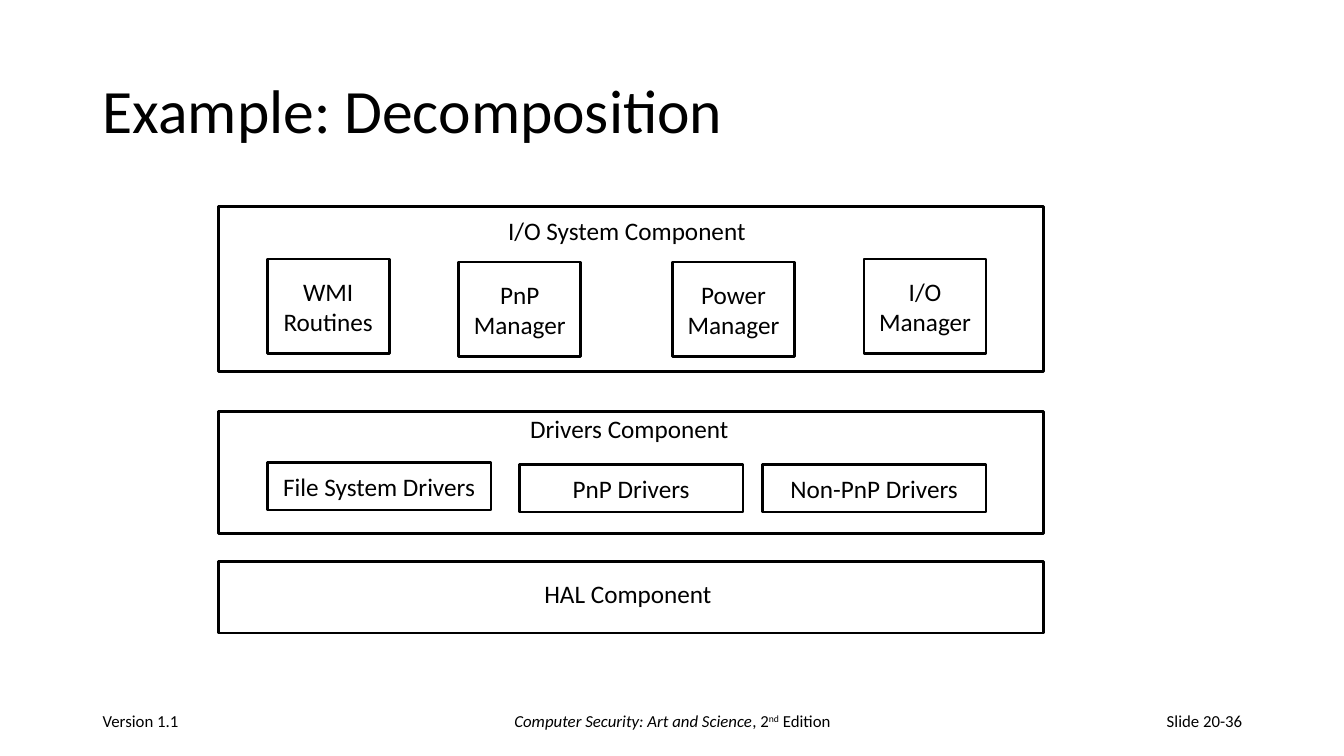
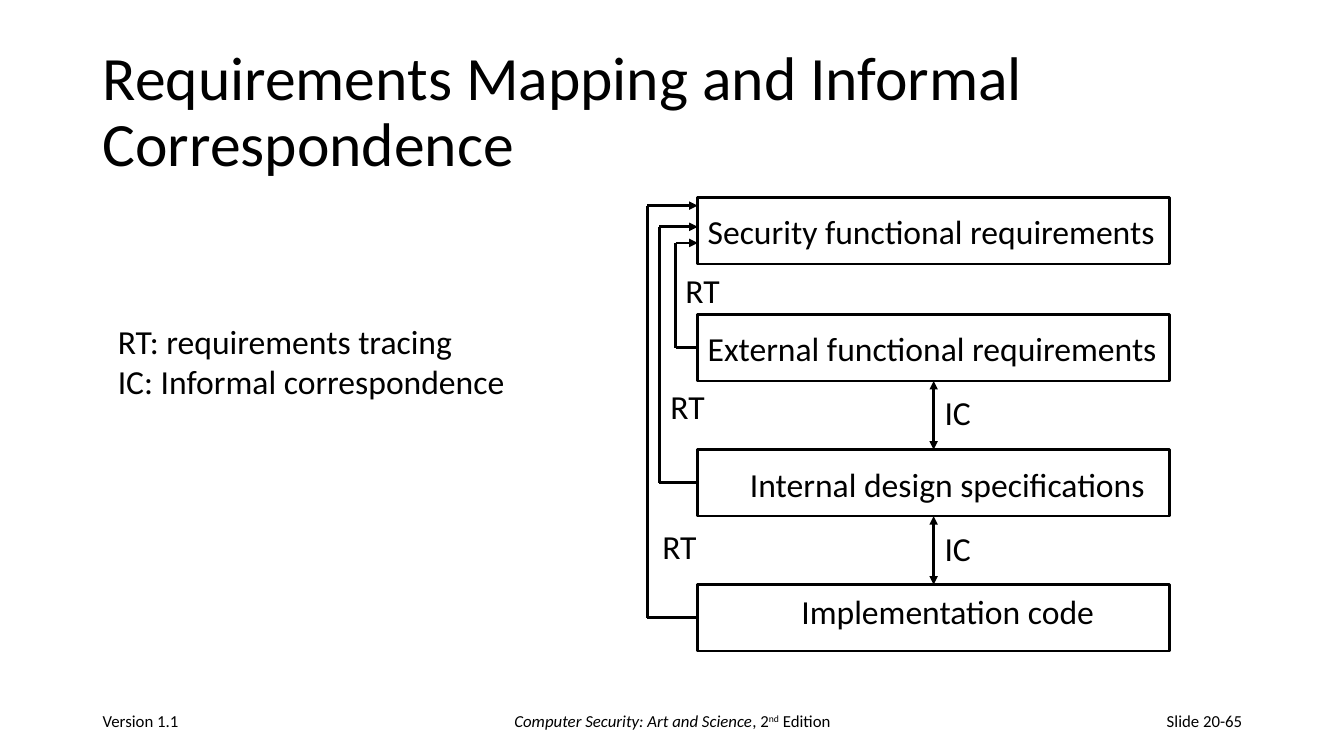
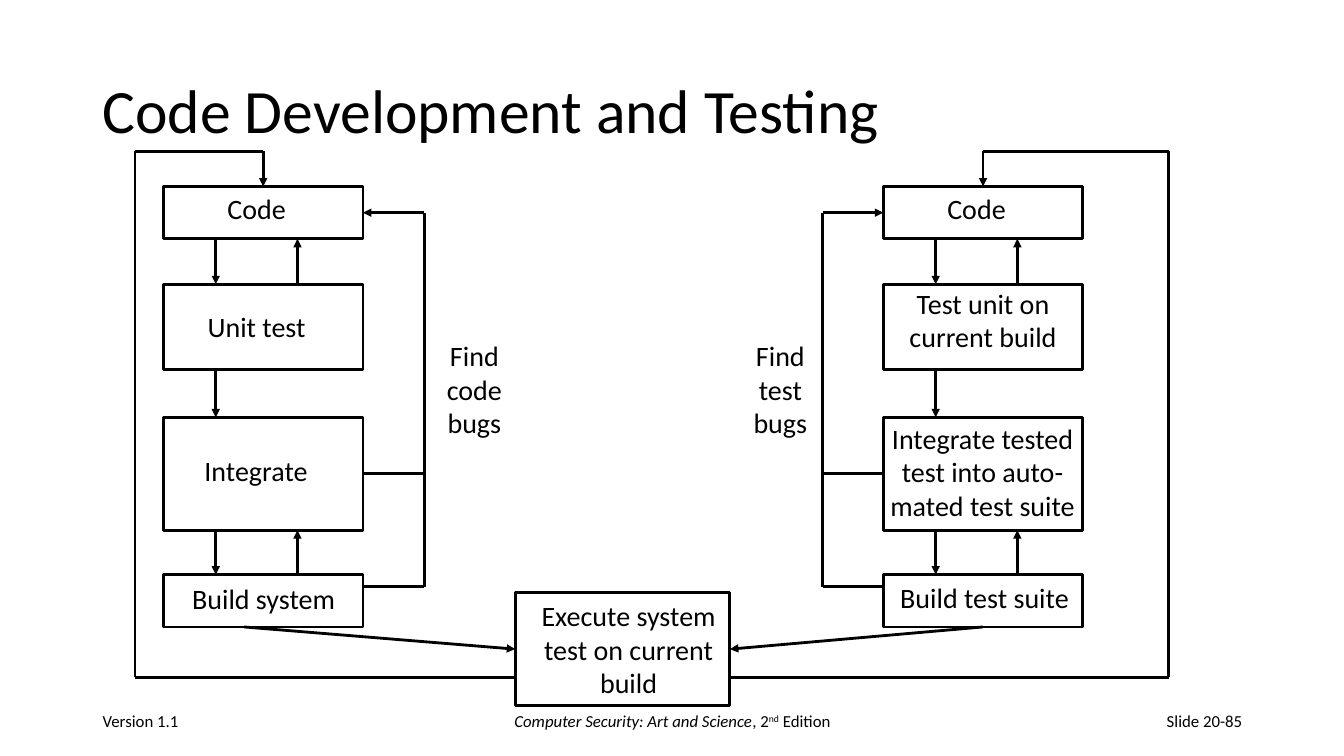
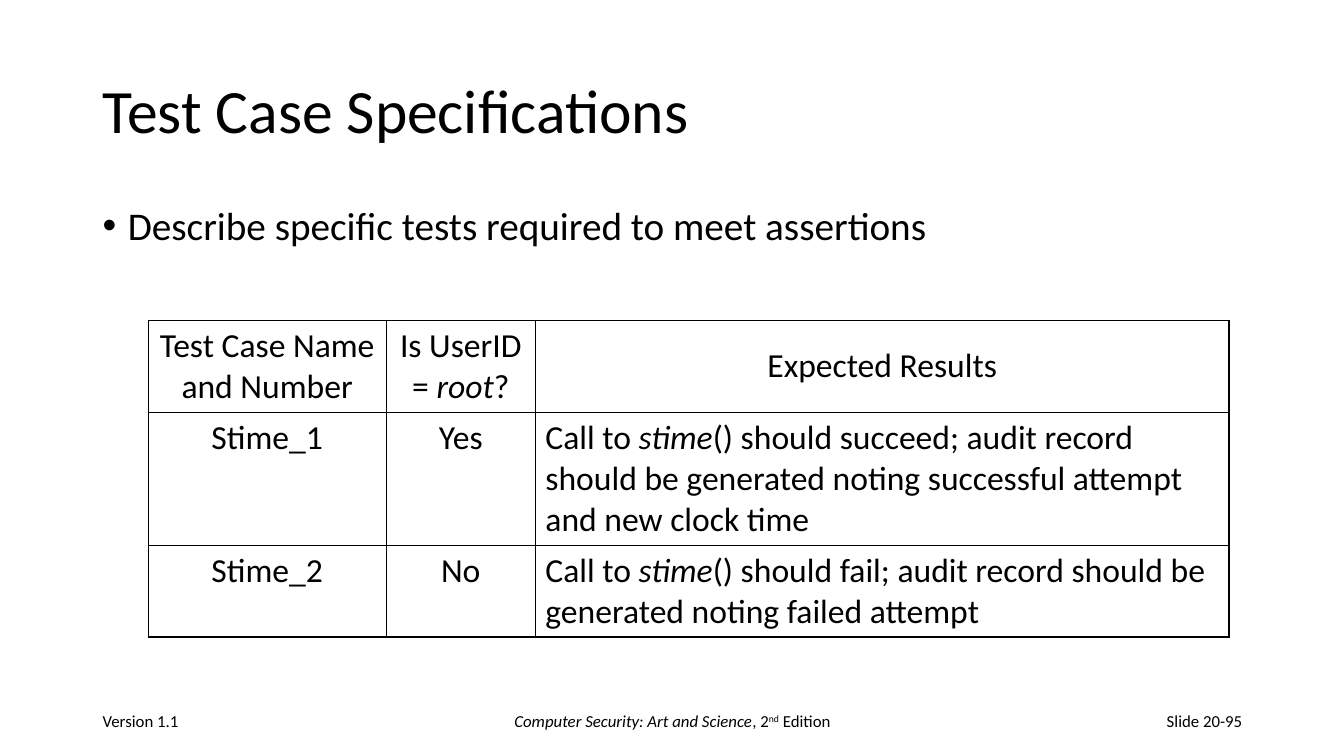
import lxml.etree
import pptx
import pptx.dml.color
import pptx.enum.shapes
import pptx.enum.text
import pptx.oxml
import pptx.oxml.ns
import pptx.util

# ---- Shared style: 100 px to the inch ----
PX = 9144
SLIDE_W, SLIDE_H = 1333, 750
INK = "000000"
FONT = "Calibri"
LINE_PT = 2
LEFT = pptx.enum.text.PP_ALIGN.LEFT
CENTER = pptx.enum.text.PP_ALIGN.CENTER
RIGHT = pptx.enum.text.PP_ALIGN.RIGHT
TOP = pptx.enum.text.MSO_ANCHOR.TOP
MIDDLE = pptx.enum.text.MSO_ANCHOR.MIDDLE

TITLE_AREA = (92, 40, 1150, 145)
FOOTERS = [  # text, left, width, alignment
    ("Version 1.1", 92, 300, LEFT),
    ("*Computer Security: Art and Science*, 2^nd^ Edition", 442, 450, CENTER),
    ("Slide 20-{number}", 942, 300, RIGHT),
]
FOOTER_TOP, FOOTER_H = 695, 40

# ---- Content: *...* is italic, ^...^ is superscript ----
# Slide 1: left, width of the frames; then top, height, label, label left, top, width
FRAME_X, FRAME_W = 217, 818
FRAMES = [
    (205, 164, "I/O System Component", 494, 209, 259),
    (408, 121, "Drivers Component", 516, 405, 219),
    (557, 71, "HAL Component", 530, 569, 188),
]
MANAGER_SIZE, DRIVER_SIZE = (121, 94), (222, 47)
PARTS = [  # text, left, top, size
    ("WMI\nRoutines", 265, 257, MANAGER_SIZE),
    ("PnP\nManager", 455, 260, MANAGER_SIZE),
    ("Power\nManager", 667, 260, MANAGER_SIZE),
    ("I/O\nManager", 857, 257, MANAGER_SIZE),
    ("File System Drivers", 265, 459, DRIVER_SIZE),
    ("PnP Drivers", 515, 461, DRIVER_SIZE),
    ("Non-PnP Drivers", 756, 461, DRIVER_SIZE),
]

# Slide 2: levels of the specification
LEVEL_X, LEVEL_W, LEVEL_H = 692, 468, 66
LEVELS = [  # top, label, label left, top, width
    (196, "Security functional requirements", 692, 204, 468),
    (312, "External functional requirements", 692, 320, 470),
    (446, "Internal design specifications", 734, 455, 416),
    (580, "Implementation code", 785, 581, 313),
]
TRACES = [(1, 670, 241), (2, 654, 225), (3, 642, 204)]  # level, turn x, target y
CORRESPONDENCES = [(1, 2), (2, 3)]  # upper and lower level
MAPPING_LABELS = [  # text, left, top, width
    ("RT", 670, 263, 55), ("RT", 655, 378, 55), ("RT", 647, 517, 55),
    ("IC", 927, 384, 46), ("IC", 927, 519, 46),
    ("RT: requirements tracing\nIC: Informal correspondence", 107, 313, 413),
]

# Slide 3: two mirrored columns of steps
STEP_W = 198
STEPS = [(185, 52), (282, 85), (414, 112), (570, 52)]  # top, height
DOWN_X, UP_X = 52, 133  # arrow offsets from the left of a step
UP_AFTER = {0, 2}  # gaps that also have an arrow back
EXECUTE = (511, 588, 213, 112)
EXECUTE_LABEL = ("Execute system\ntest on current\nbuild", 526, 589, 195)
LOOP_TOP, LOOP_BOTTOM, BUGS_Y = 150, 672, 582
COLUMNS = [
    {"x": 162, "bugs_side": 162 + STEP_W, "bugs_x": 421, "loop_x": 134,
     "execute_side": 511, "to_execute_x": 242,
     "labels": [("Code", 215, 185, 79), ("Unit test", 195, 302, 119),
                ("Integrate", 192, 445, 124), ("Build system", 180, 572, 163),
                ("Find\ncode\nbugs", 433, 331, 75)]},
    {"x": 876, "bugs_side": 876, "bugs_x": 816, "loop_x": 1159,
     "execute_side": 724, "to_execute_x": 975,
     "labels": [("Code", 929, 185, 79), ("Test unit on\ncurrent build", 891, 279, 168),
                ("Integrate tested\ntest into auto-\nmated test suite", 872, 413, 205),
                ("Build test suite", 882, 571, 189),
                ("Find\ntest\nbugs", 737, 331, 74)]},
]

# Slide 4: table
TESTS_BULLET = "Describe specific tests required to meet assertions"
TESTS_AT = (147, 318)
TESTS_COLS, TESTS_ROWS = [236, 148, 688], [91, 132, 91]
TESTS = [
    ("Test Case Name\nand Number", "Is UserID\n= *root*?", "Expected Results"),
    ("Stime_1", "Yes", "Call to *stime*() should succeed; audit record should be "
                       "generated noting successful attempt and new clock time"),
    ("Stime_2", "No", "Call to *stime*() should fail; audit record should be "
                      "generated noting failed attempt"),
]


# ---- Helpers ----
def px(*lengths):
    return [pptx.util.Emu(length * PX) for length in lengths]


def color(value):
    return pptx.dml.color.RGBColor.from_string(value)


def add_xml(parent, tag, **attributes):
    child = lxml.etree.SubElement(parent, pptx.oxml.ns.qn(tag))
    for name, value in attributes.items():
        child.set(name, str(value))
    return child


def add_run(paragraph, text, size, italic, raised):
    run = paragraph.add_run()
    run.text = text
    style = {"name": FONT, "size": pptx.util.Pt(size), "italic": italic}
    for name, value in style.items():
        setattr(run.font, name, value)
    run.font.color.rgb = color(INK)
    if raised:
        run._r.get_or_add_rPr().set("baseline", "30000")


def write(frame, text, size, align=LEFT, spacing=None):
    for index, line in enumerate(text.split("\n")):
        paragraph = frame.paragraphs[0] if index == 0 else frame.add_paragraph()
        paragraph.alignment = align
        if spacing:
            paragraph.line_spacing = spacing
        for i, part in enumerate(line.split("*")):
            for j, piece in enumerate(part.split("^")):
                if piece:
                    add_run(paragraph, piece, size, i % 2 == 1, j % 2 == 1)


def add_text(slide, text, area, size, align=LEFT, anchor=TOP, wrap=True, spacing=None):
    frame = slide.shapes.add_textbox(*px(*area)).text_frame
    frame.word_wrap = wrap
    frame.vertical_anchor = anchor
    write(frame, text, size, align, spacing)
    return frame


def add_label(slide, label, size, align=LEFT):
    text, x, y, w = label
    lines = text.count("\n") + 1
    h = round(10 + lines * size * 1.2 / 72 * 100)
    add_text(slide, text, (x, y, w, h), size, align, wrap=False)


def add_box(slide, x, y, w, h):
    box = slide.shapes.add_shape(pptx.enum.shapes.MSO_SHAPE.RECTANGLE, *px(x, y, w, h))
    box.shadow.inherit = False
    box.fill.background()
    box.line.color.rgb = color(INK)
    box.line.width = pptx.util.Pt(LINE_PT)
    return box


def find_joint(boxes, point):
    """The box and side whose middle is at the point, if any."""
    x, y = px(*point)
    for box in boxes:
        mid_x, mid_y = box.left + box.width // 2, box.top + box.height // 2
        sides = [(mid_x, box.top), (box.left, mid_y),
                 (mid_x, box.top + box.height), (box.left + box.width, mid_y)]
        for side, (side_x, side_y) in enumerate(sides):
            if max(abs(side_x - x), abs(side_y - y)) < PX:
                return box, side
    return None


def add_route(slide, boxes, points, arrow="", join=True):
    """Straight lines through the points; arrow is "", "end" or "both"."""
    last = len(points) - 2
    for index, (start, stop) in enumerate(zip(points, points[1:])):
        line = slide.shapes.add_connector(
            pptx.enum.shapes.MSO_CONNECTOR.STRAIGHT, *px(*start, *stop))
        line.line.color.rgb = color(INK)
        line.line.width = pptx.util.Pt(LINE_PT)
        outline = line.line._get_or_add_ln()
        if arrow == "both" and index == 0:
            add_xml(outline, "a:headEnd", type="triangle")
        if arrow and index == last:
            add_xml(outline, "a:tailEnd", type="triangle")
        add_xml(line._element.spPr, "a:effectLst")
        first_joint = find_joint(boxes, start) if index == 0 else None
        last_joint = find_joint(boxes, stop) if index == last else None
        if first_joint:
            line.begin_connect(*first_joint)
        if last_joint:
            line.end_connect(*last_joint)


def set_borders(cell):
    properties = cell._tc.get_or_add_tcPr()
    for index, tag in enumerate(("a:lnL", "a:lnR", "a:lnT", "a:lnB")):
        border = pptx.oxml.parse_xml(
            f'<{tag} {pptx.oxml.ns.nsdecls("a")} w="12700"><a:solidFill>'
            f'<a:srgbClr val="{INK}"/></a:solidFill></{tag}>')
        properties.insert(index, border)


def new_slide(deck, title, number):
    slide = deck.slides.add_slide(deck.slide_layouts[6])
    add_text(slide, title, TITLE_AREA, 44, anchor=MIDDLE, spacing=0.9)
    for text, x, w, align in FOOTERS:
        add_text(slide, text.format(number=number), (x, FOOTER_TOP, w, FOOTER_H),
                 12, align, MIDDLE)
    return slide


# ---- Slides ----
def build_decomposition(slide):
    for y, h, text, label_x, label_y, label_w in FRAMES:
        add_box(slide, FRAME_X, y, FRAME_W, h)
        add_label(slide, (text, label_x, label_y, label_w), 18)
    for text, x, y, size in PARTS:
        frame = add_box(slide, x, y, *size).text_frame
        frame.word_wrap = False
        frame.vertical_anchor = MIDDLE
        write(frame, text, 18, CENTER)


def build_mapping(slide):
    levels = []
    for y, *label in LEVELS:
        levels.append(add_box(slide, LEVEL_X, y, LEVEL_W, LEVEL_H))
        add_label(slide, label, 24)
    for level, turn_x, target_y in TRACES:
        mid_y = LEVELS[level][0] + LEVEL_H // 2
        add_route(slide, levels, [(LEVEL_X, mid_y), (turn_x, mid_y),
                                  (turn_x, target_y), (LEVEL_X, target_y)], "end")
    mid_x = LEVEL_X + LEVEL_W // 2
    for upper, lower in CORRESPONDENCES:
        add_route(slide, levels, [(mid_x, LEVELS[upper][0] + LEVEL_H),
                                  (mid_x, LEVELS[lower][0])], "both")
    for label in MAPPING_LABELS:
        add_label(slide, label, 24)


def build_testing(slide):
    execute = add_box(slide, *EXECUTE)
    add_label(slide, EXECUTE_LABEL, 20, CENTER)
    execute_mid_y = EXECUTE[1] + EXECUTE[3] // 2
    code_y, code_h = STEPS[0]
    integrate_y, integrate_h = STEPS[2]
    build_bottom = sum(STEPS[3])
    for column in COLUMNS:
        x, side, bugs_x = column["x"], column["bugs_side"], column["bugs_x"]
        loop_x, execute_side = column["loop_x"], column["execute_side"]
        boxes = [execute] + [add_box(slide, x, y, STEP_W, h) for y, h in STEPS]
        for label in column["labels"]:
            add_label(slide, label, 20, CENTER)
        # Arrows between the steps
        for gap, ((y, h), (next_y, _)) in enumerate(zip(STEPS, STEPS[1:])):
            add_route(slide, boxes, [(x + DOWN_X, y + h), (x + DOWN_X, next_y)], "end")
            if gap in UP_AFTER:
                add_route(slide, boxes, [(x + UP_X, next_y), (x + UP_X, y + h)], "end")
        # Bugs go back to the code
        code_mid_y = code_y + code_h // 2
        integrate_mid_y = integrate_y + integrate_h // 2
        add_route(slide, boxes, [(side, BUGS_Y), (bugs_x, BUGS_Y),
                                 (bugs_x, code_mid_y), (side, code_mid_y)], "end")
        add_route(slide, boxes, [(side, integrate_mid_y), (bugs_x, integrate_mid_y)])
        # To the system test and back
        add_route(slide, boxes, [(column["to_execute_x"], build_bottom),
                                 (execute_side, execute_mid_y)], "end")
        code_mid_x = x + STEP_W // 2
        add_route(slide, boxes, [(execute_side, LOOP_BOTTOM), (loop_x, LOOP_BOTTOM),
                                 (loop_x, LOOP_TOP), (code_mid_x, LOOP_TOP),
                                 (code_mid_x, code_y)], "end")


def build_test_cases(slide):
    body = add_text(slide, TESTS_BULLET, (92, 200, 1150, 77), 28, spacing=0.9)
    bullet = body.paragraphs[0]._p.get_or_add_pPr()
    bullet.set("marL", str(25 * PX))
    bullet.set("indent", str(-25 * PX))
    add_xml(bullet, "a:buFont", typeface="Arial")
    add_xml(bullet, "a:buChar", char="•")

    area = px(*TESTS_AT, sum(TESTS_COLS), sum(TESTS_ROWS))
    tests = slide.shapes.add_table(len(TESTS_ROWS), len(TESTS_COLS), *area).table
    tests.first_row = tests.horz_banding = False
    for column, width in zip(tests.columns, px(*TESTS_COLS)):
        column.width = width
    for row, height in zip(tests.rows, px(*TESTS_ROWS)):
        row.height = height
    for r, texts in enumerate(TESTS):
        for c, text in enumerate(texts):
            cell = tests.cell(r, c)
            cell.fill.background()
            cell.vertical_anchor = MIDDLE if r == 0 else TOP
            write(cell.text_frame, text, 24, LEFT if r and c == 2 else CENTER)
            set_borders(cell)


SLIDES = [
    ("Example: Decomposition", 36, build_decomposition),
    ("Requirements Mapping and Informal Correspondence", 65, build_mapping),
    ("Code Development and Testing", 85, build_testing),
    ("Test Case Specifications", 95, build_test_cases),
]


def main():
    deck = pptx.Presentation()
    deck.slide_width, deck.slide_height = px(SLIDE_W, SLIDE_H)
    for title, number, build in SLIDES:
        build(new_slide(deck, title, number))
    deck.save("out.pptx")


if __name__ == "__main__":
    main()
